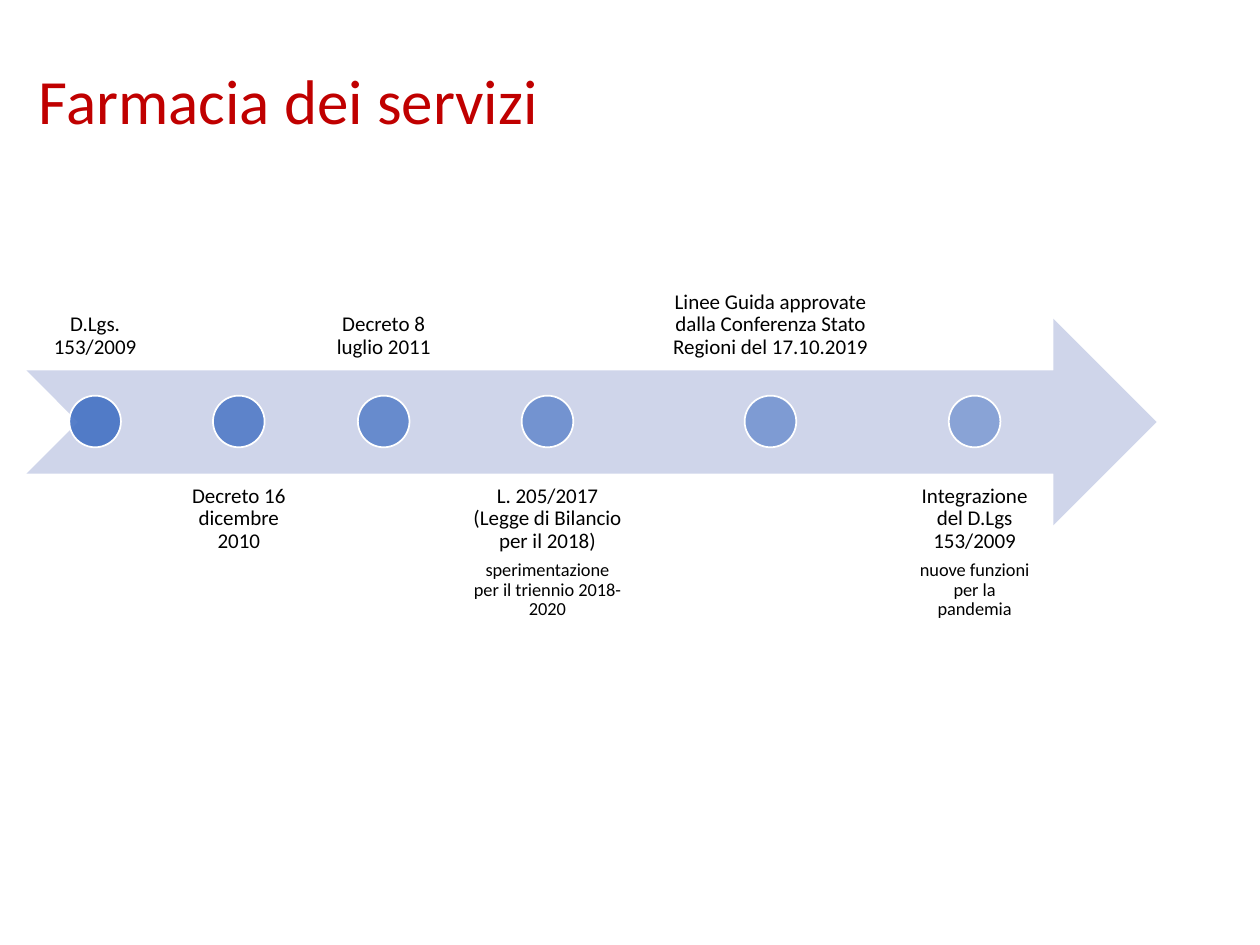
from dataclasses import dataclass

from lxml.etree import SubElement
from pptx import Presentation
from pptx.dml.color import RGBColor
from pptx.enum.shapes import MSO_SHAPE
from pptx.enum.text import MSO_ANCHOR, PP_ALIGN
from pptx.oxml.ns import qn
from pptx.util import Inches, Pt

DOT = 0.41
HIGH = 1.64
INSET = 0.09


@dataclass
class Step:
    left: float
    wide: float
    text: str
    note: str = ""


STEPS = [
    Step(0.21, 1.09, "D.Lgs. 153/2009"),
    Step(1.35, 1.09, "Decreto 16 dicembre 2010"),
    Step(2.5, 1.09, "Decreto 8 luglio 2011"),
    Step(3.65, 1.39, "L. 205/2017 (Legge di Bilancio per il 2018)",
         "sperimentazione per il triennio 2018-2020"),
    Step(5.09, 2.05,
         "Linee Guida approvate dalla Conferenza Stato Regioni del 17.10.2019"),
    Step(7.19, 1.09, "Integrazione del D.Lgs 153/2009",
         "nuove funzioni per la pandemia"),
]


def color(code: str) -> RGBColor:
    return RGBColor.from_string(code)


def apply(item, values: dict) -> None:
    for name, value in values.items():
        setattr(item, name, value)


def add_box(slide, left: float, top: float, wide: float, high: float, frame: dict):
    box = slide.shapes.add_textbox(Inches(left), Inches(top), Inches(wide), Inches(high))
    apply(box.text_frame, {"word_wrap": True, **frame})
    return box.text_frame


def write(para, text: str, size: float, code: str, form: dict) -> None:
    apply(para, {"text": text, "line_spacing": 0.9, **form})
    apply(para.font, {"name": "Calibri", "size": Pt(size)})
    para.font.color.rgb = color(code)


def add_shape(slide, kind, left: float, top: float, wide: float, high: float, code: str):
    shape = slide.shapes.add_shape(
        kind, Inches(left), Inches(top), Inches(wide), Inches(high))
    shape.shadow.inherit = False
    shape.fill.solid()
    shape.fill.fore_color.rgb = color(code)
    shape.line.fill.background()
    return shape


def add_dot(slide, step: Step, alpha: int) -> None:
    left = step.left + (step.wide - DOT) / 2
    dot = add_shape(slide, MSO_SHAPE.OVAL, left, 3.14, DOT, DOT, "4472C4")
    dot.line.color.rgb = color("FFFFFF")
    dot.line.width = Pt(1)
    tint = dot.fill._xPr.find(qn("a:solidFill"))[0]
    SubElement(tint, qn("a:alpha"), val=str(alpha * 1000))


def add_label(slide, step: Step, above: bool) -> None:
    frame = dict.fromkeys(
        ("margin_left", "margin_top", "margin_right", "margin_bottom"), Inches(INSET))
    frame["vertical_anchor"] = MSO_ANCHOR.BOTTOM if above else MSO_ANCHOR.TOP
    top = 1.3 if above else 3.76
    body = add_box(slide, step.left, top, step.wide, HIGH, frame)
    form = {"alignment": PP_ALIGN.CENTER, "space_after": Pt(4.2)}
    write(body.paragraphs[0], step.text, 12, "000000", form)
    if step.note:
        write(body.add_paragraph(), step.note, 10.5, "000000", form)


def main() -> None:
    deck = Presentation()
    apply(deck, {"slide_width": Inches(10), "slide_height": Inches(7.5)})
    slide = deck.slides.add_slide(deck.slide_layouts[6])
    add_shape(slide, MSO_SHAPE.NOTCHED_RIGHT_ARROW, 0.21, 2.53, 8.97, HIGH, "CFD5EA")
    for index, step in enumerate(STEPS):
        add_label(slide, step, index % 2 == 0)
        add_dot(slide, step, 90 - 8 * index)
    title = add_box(slide, 0.21, 0.1, 8.62, 1.45, {"vertical_anchor": MSO_ANCHOR.MIDDLE})
    write(title.paragraphs[0], "Farmacia dei servizi", 36, "C00000", {})
    deck.save("out.pptx")


if __name__ == "__main__":
    main()
